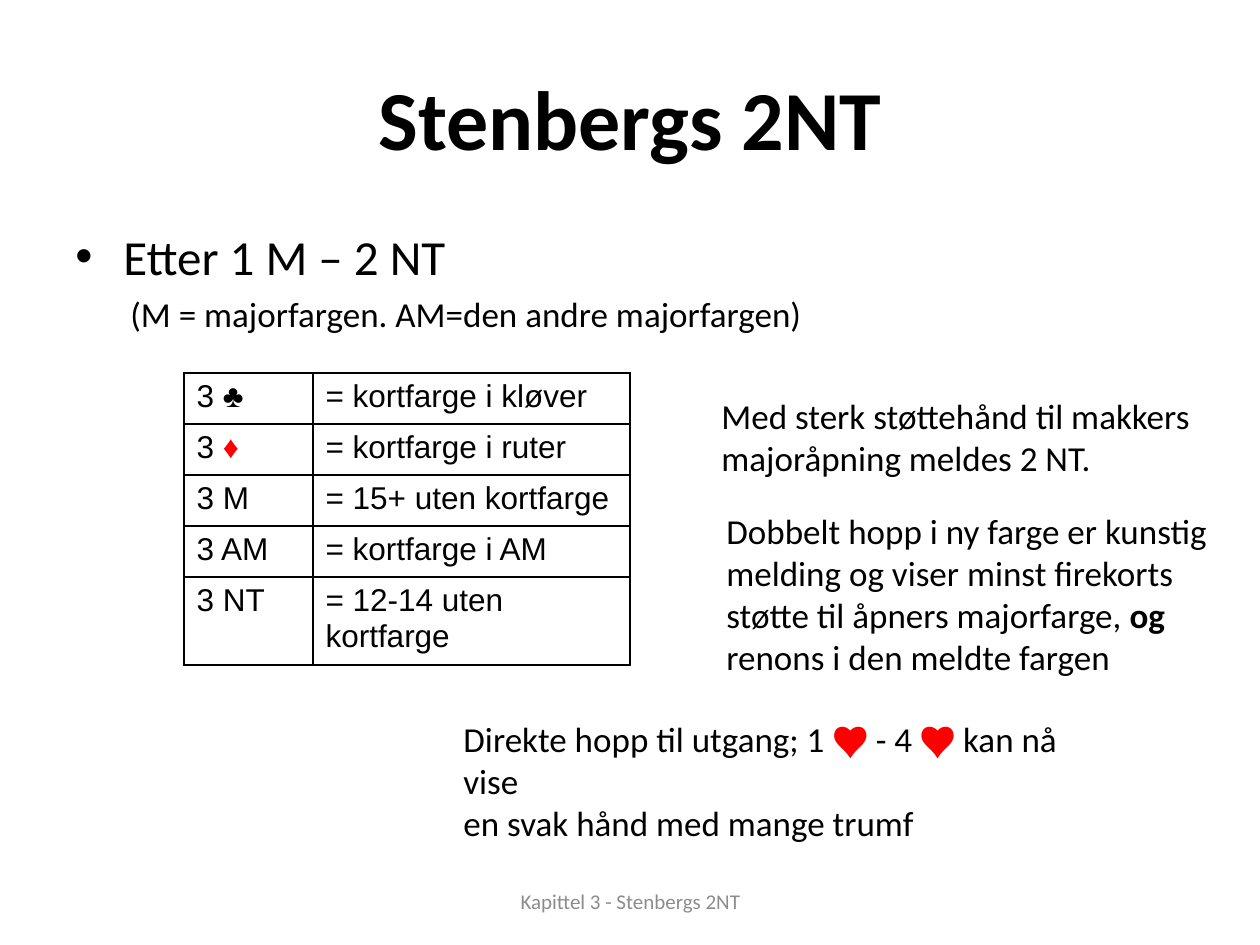
from lxml.etree import SubElement
from pptx import Presentation
from pptx.dml.color import RGBColor
from pptx.enum.text import MSO_ANCHOR as Anchor, PP_ALIGN as Align
from pptx.oxml.ns import qn
from pptx.util import Emu, Pt

EMU_PER_PX = 914400 / 126
BLACK = RGBColor(0, 0, 0)
RED = RGBColor(255, 0, 0)
GRAY = RGBColor(0x8C, 0x8C, 0x8C)


def px(*lengths):
    """Turn pixel lengths into a list of EMU lengths."""
    return [Emu(round(length * EMU_PER_PX)) for length in lengths]


def write_runs(paragraph, runs, **common):
    """Add (text, font values) runs; plain strings use the common values."""
    for run_item in runs:
        text, own = (run_item, {}) if isinstance(run_item, str) else run_item
        values = {"name": "Calibri", "size": Pt(20), "color": BLACK, **common, **own}
        run = paragraph.add_run()
        run.text = text
        run.font.color.rgb = values.pop("color")
        for attribute, value in values.items():
            setattr(run.font, attribute, value)


presentation = Presentation()
presentation.slide_width, presentation.slide_height = px(1260, 945)
slide = presentation.slides.add_slide(presentation.slide_layouts[5])

# Title
title = slide.shapes.title
title.left, title.top, title.width, title.height = px(63, 38, 1134, 158)
title.text_frame.vertical_anchor = Anchor.MIDDLE
title_paragraph = title.text_frame.paragraphs[0]
title_paragraph.alignment = Align.CENTER
write_runs(title_paragraph, ["Stenbergs 2NT"], size=Pt(48), bold=True)

# Bullet and its explanation
body = slide.shapes.add_textbox(*px(63, 220, 1134, 120)).text_frame
body.word_wrap = True
bullet, explanation = body.paragraphs[0], body.add_paragraph()
for paragraph, margin, indent in ((bullet, 48, -48), (explanation, 55, 0)):
    margin_emu, indent_emu = px(margin, indent)
    properties = paragraph._p.get_or_add_pPr()
    properties.set("marL", str(margin_emu))
    properties.set("indent", str(indent_emu))
SubElement(bullet._p.pPr, qn("a:buFont")).set("typeface", "Arial")
SubElement(bullet._p.pPr, qn("a:buChar")).set("char", "•")
explanation.space_before = Pt(4)
write_runs(bullet, ["Etter 1 M – 2 NT"], size=Pt(28))
write_runs(explanation, ["(M = majorfargen. AM=den andre majorfargen)"])

# Table of responses
RESPONSES = [
    (["3 ♣"], ["= kortfarge i kløver"]),
    (["3 ", ("♦", {"color": RED})], ["= kortfarge i ruter"]),
    (["3 M"], ["= 15+ uten kortfarge"]),
    (["3 AM"], ["= kortfarge i AM"]),
    (["3 NT"], ["= 12-14 uten kortfarge"]),
]
table = slide.shapes.add_table(len(RESPONSES), 2, *px(184, 373, 446, 255)).table
table.first_row = table.horz_banding = False
for column, width in zip(table.columns, px(129, 317)):
    column.width = width
for row, response in zip(table.rows, RESPONSES):
    row.height = px(51)[0]
    for cell, runs in zip(row.cells, response):
        write_runs(cell.text_frame.paragraphs[0], runs, name="Arial", size=Pt(18))
        cell_properties = cell._tc.get_or_add_tcPr()
        for side in ("lnL", "lnR", "lnT", "lnB"):
            border = SubElement(cell_properties, qn(f"a:{side}"), w=str(Pt(1)))
            border_fill = SubElement(border, qn("a:solidFill"))
            SubElement(border_fill, qn("a:srgbClr"), val=str(BLACK))
        cell.fill.background()

# Comments and footer
HEART = ("♥ ", {"color": RED})
NOTES = [
    ((709, 388, 508, 136), [
        ["Med sterk støttehånd til makkers"],
        ["majoråpning meldes 2 NT."],
    ]),
    ((451, 711, 673, 97), [
        ["Direkte hopp til utgang; 1 ", HEART, "- 4 ", HEART, "kan nå vise"],
        ["en svak hånd med mange trumf"],
    ]),
    ((714, 503, 510, 183), [
        ["Dobbelt hopp i ny farge er kunstig"],
        ["melding og viser minst firekorts"],
        ["støtte til åpners majorfarge, ", ("og", {"bold": True})],
        ["renons i den meldte fargen"],
    ]),
]
for box, lines in NOTES:
    frame = slide.shapes.add_textbox(*px(*box)).text_frame
    frame.word_wrap = True
    for index, runs in enumerate(lines):
        paragraph = frame.add_paragraph() if index else frame.paragraphs[0]
        write_runs(paragraph, runs)

footer = slide.shapes.add_textbox(*px(431, 876, 399, 50)).text_frame
footer.word_wrap = True
footer.vertical_anchor = Anchor.MIDDLE
footer.paragraphs[0].alignment = Align.CENTER
write_runs(footer.paragraphs[0], ["Kapittel 3 - Stenbergs 2NT"], size=Pt(12), color=GRAY)

presentation.save("out.pptx")
